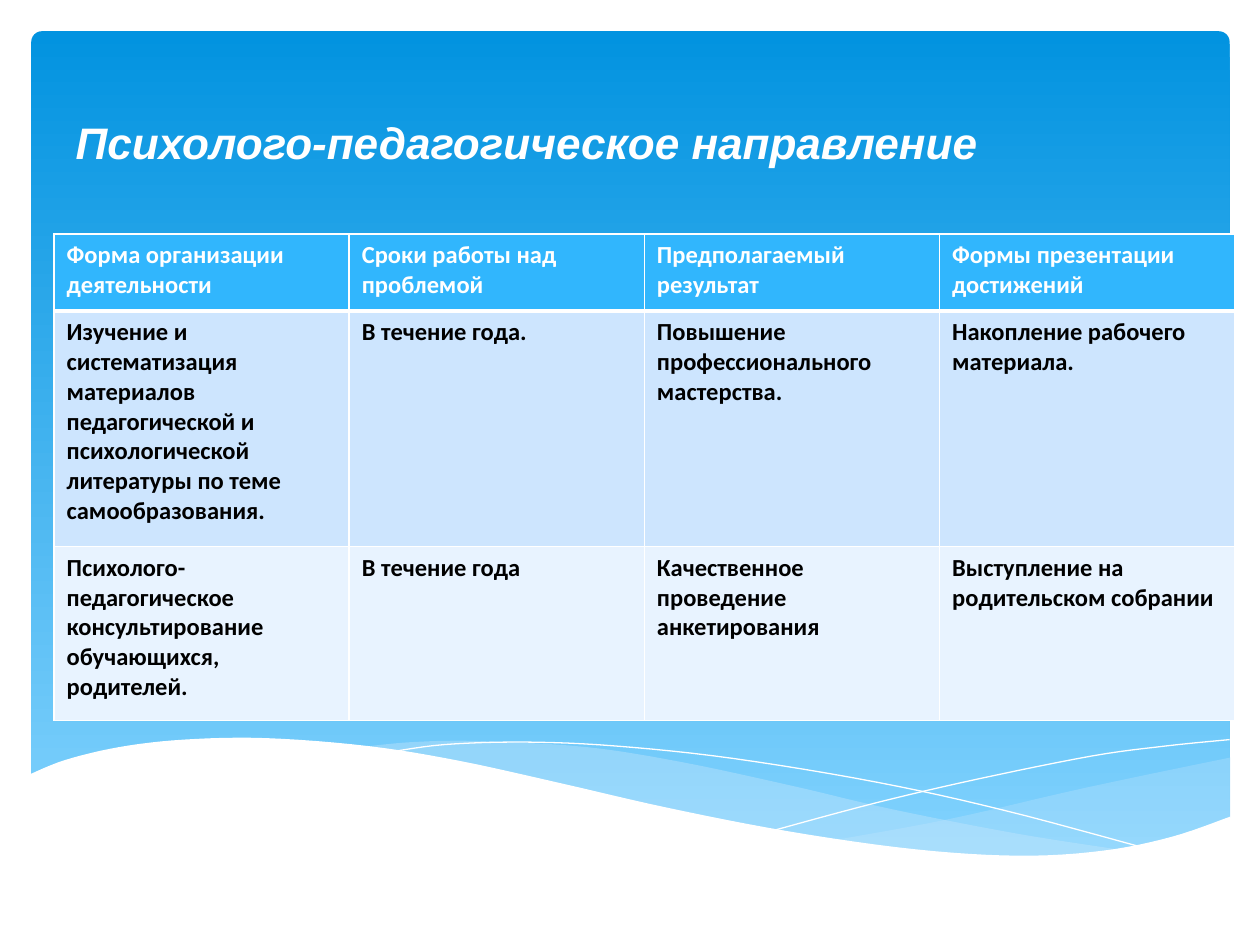
from dataclasses import dataclass

from lxml.etree import SubElement
from pptx import Presentation
from pptx.dml.color import RGBColor
from pptx.enum.shapes import MSO_SHAPE
from pptx.enum.text import MSO_ANCHOR, PP_ALIGN
from pptx.oxml import parse_xml
from pptx.oxml.ns import nsdecls, qn
from pptx.util import Cm, Pt


@dataclass(frozen=True)
class Theme:
    white: RGBColor = RGBColor.from_string("FFFFFF")
    black: RGBColor = RGBColor.from_string("000000")
    sky_top: RGBColor = RGBColor.from_string("0293E0")
    sky_bottom: RGBColor = RGBColor.from_string("83D3FE")
    wave: RGBColor = RGBColor.from_string("C6E7FC")
    header: RGBColor = RGBColor.from_string("31B6FD")
    band_dark: RGBColor = RGBColor.from_string("CDE5FE")
    band_light: RGBColor = RGBColor.from_string("E8F3FF")
    title_font: str = "Arial"
    table_font: str = "Calibri"
    title_size: float = 25.2
    table_size: float = 14


theme = Theme()


def smooth(knots, steps=6):
    """Return points on a Catmull-Rom curve through the knots."""
    padded = [knots[0], *knots, knots[-1]]
    points = [knots[0]]
    for a, b, c, d in zip(padded, padded[1:], padded[2:], padded[3:]):
        for step in range(1, steps + 1):
            t = step / steps
            points.append(tuple(
                (2 * q + (r - p) * t + (2 * p - 5 * q + 4 * r - s) * t**2
                 + (3 * q - p - 3 * r + s) * t**3) / 2
                for p, q, r, s in zip(a, b, c, d)))
    return points


def draw_outline(shapes, points, closed):
    """Draw an outline through points given in centimetres."""
    corners = [(Cm(x), Cm(y)) for x, y in points]
    builder = shapes.build_freeform(*corners[0])
    builder.add_line_segments(corners[1:], close=closed)
    outline = builder.convert_to_shape()
    outline.shadow.inherit = False
    return outline


presentation = Presentation()
presentation.slide_width, presentation.slide_height = Cm(25.4), Cm(19.05)
slide = presentation.slides.add_slide(presentation.slide_layouts[5])
shapes = slide.shapes

# Sky panel
sky = shapes.add_shape(MSO_SHAPE.ROUNDED_RECTANGLE, Cm(0.63), Cm(0.63), Cm(24.16), Cm(16.76))
sky.adjustments[0] = 0.013
sky.shadow.inherit = False
sky.line.fill.background()
sky.fill.gradient()
sky.fill.gradient_angle = 270
for stop, colour in zip(sky.fill.gradient_stops, (theme.sky_top, theme.sky_bottom)):
    stop.color.rgb = colour

# Filled waves: curved edges, straight corners, opacity in percent
right_crest = [(24.81, 15.27), (21.89, 15.88), (19.15, 16.51), (16.81, 16.94)]
right_base = [(16.81, 16.94), (18.62, 17.17), (20.7, 17.27), (22.61, 17.12),
              (23.8, 16.84), (24.81, 16.48)]
long_crest = [(22.71, 17.15), (20.52, 16.81), (17.96, 16.31), (16, 15.85), (13.77, 15.37),
              (11.81, 15.06), (9.65, 14.94), (8.33, 14.96), (7.29, 15.06)]
long_base = [(7.29, 15.06), (9.22, 15.37), (11.43, 15.85), (13.46, 16.31), (15.72, 16.76),
             (17.68, 17.07), (19.35, 17.25), (20.8, 17.27), (22.71, 17.15)]
front_crest = [(24.81, 16.46), (23.62, 16.87), (22.23, 17.15), (20.55, 17.25), (18.44, 17.12),
               (15.9, 16.76), (13.44, 16.28), (11.35, 15.8), (9.27, 15.34), (7.42, 15.04),
               (5.36, 14.88), (3.71, 14.91), (2.41, 15.06), (1.32, 15.32), (0.58, 15.62)]
front_corners = [(0.58, 18.57), (24.81, 18.57)]
back_waves = [(right_crest, right_base, 29), (long_crest, long_base, 40)]
for crest, base, opacity in back_waves:
    wave = draw_outline(shapes, smooth(crest) + smooth(base), True)
    wave.line.fill.background()
    wave.fill.solid()
    wave.fill.fore_color.rgb = theme.wave
    colour_node = wave.fill._xPr.find(qn("a:solidFill"))[0]
    SubElement(colour_node, qn("a:alpha"), val=str(opacity * 1000))

# Thin crossing lines
falling_line = [(7.87, 15.16), (8.97, 15.01), (10.59, 14.96), (12.42, 15.04),
                (14.78, 15.29), (17.68, 15.77), (20.22, 16.33), (23.06, 17.09)]
rising_line = [(15.6, 16.74), (17.68, 16.18), (19.74, 15.7), (22.02, 15.24),
               (23.5, 15.04), (24.79, 14.91)]
for knots in (falling_line, rising_line):
    strand = draw_outline(shapes, smooth(knots), False)
    strand.fill.background()
    strand.line.color.rgb = theme.white
    strand.line.width = Pt(0)

# White front wave
front_wave = draw_outline(shapes, smooth(front_crest) + front_corners, True)
front_wave.line.fill.background()
front_wave.fill.solid()
front_wave.fill.fore_color.rgb = theme.white

# Plan table
plan_rows = [
    ["Форма организации деятельности", "Сроки работы над проблемой",
     "Предполагаемый результат", "Формы презентации \nдостижений"],
    ["Изучение и систематизация материалов педагогической и психологической "
     "литературы по теме самообразования.", "В течение года.",
     "Повышение профессионального мастерства.", "Накопление рабочего материала."],
    ["Психолого- педагогическое консультирование обучающихся, родителей.",
     "В течение года", "Качественное проведение анкетирования ",
     "Выступление на родительском собрании"],
]
row_heights = [1.55, 4.75, 3.5]
row_fills = [theme.header, theme.band_dark, theme.band_light]
row_inks = [theme.white, theme.black, theme.black]
row_rules = [(1, 3), (3, 1), (1, 1)]  # top and bottom border, points

plan = shapes.add_table(3, 4, Cm(1.09), Cm(4.72), Cm(23.8), Cm(sum(row_heights))).table
for column in plan.columns:
    column.width = Cm(5.95)
for row, height, texts, fill, ink, (top, bottom) in zip(
        plan.rows, row_heights, plan_rows, row_fills, row_inks, row_rules):
    row.height = Cm(height)
    for cell, text in zip(row.cells, texts):
        cell.text_frame.text = text
        cell.fill.solid()
        cell.fill.fore_color.rgb = fill
        for paragraph in cell.text_frame.paragraphs:
            for run in paragraph.runs:
                run.font.name = theme.table_font
                run.font.size = Pt(theme.table_size)
                run.font.bold = True
                run.font.color.rgb = ink
        borders = [("lnL", 1), ("lnR", 1), ("lnT", top), ("lnB", bottom)]
        for place, (side, points) in enumerate(borders):
            cell._tc.get_or_add_tcPr().insert(place, parse_xml(
                f'<a:{side} {nsdecls("a")} w="{Pt(points)}"><a:solidFill>'
                f'<a:srgbClr val="{theme.white}"/></a:solidFill></a:{side}>'))

# Title, brought in front of the sky
heading = shapes.title
heading.left, heading.top, heading.width, heading.height = Cm(1.27), Cm(0.94), Cm(22.86), Cm(2.59)
heading.text_frame.text = "Психолого-педагогическое направление"
heading.text_frame.vertical_anchor = MSO_ANCHOR.BOTTOM
heading_line = heading.text_frame.paragraphs[0]
heading_line.alignment = PP_ALIGN.LEFT
heading_font = heading_line.runs[0].font
heading_font.name = theme.title_font
heading_font.size = Pt(theme.title_size)
heading_font.bold = heading_font.italic = True
heading_font.color.rgb = theme.white
shapes._spTree.append(heading._element)

presentation.save("out.pptx")
